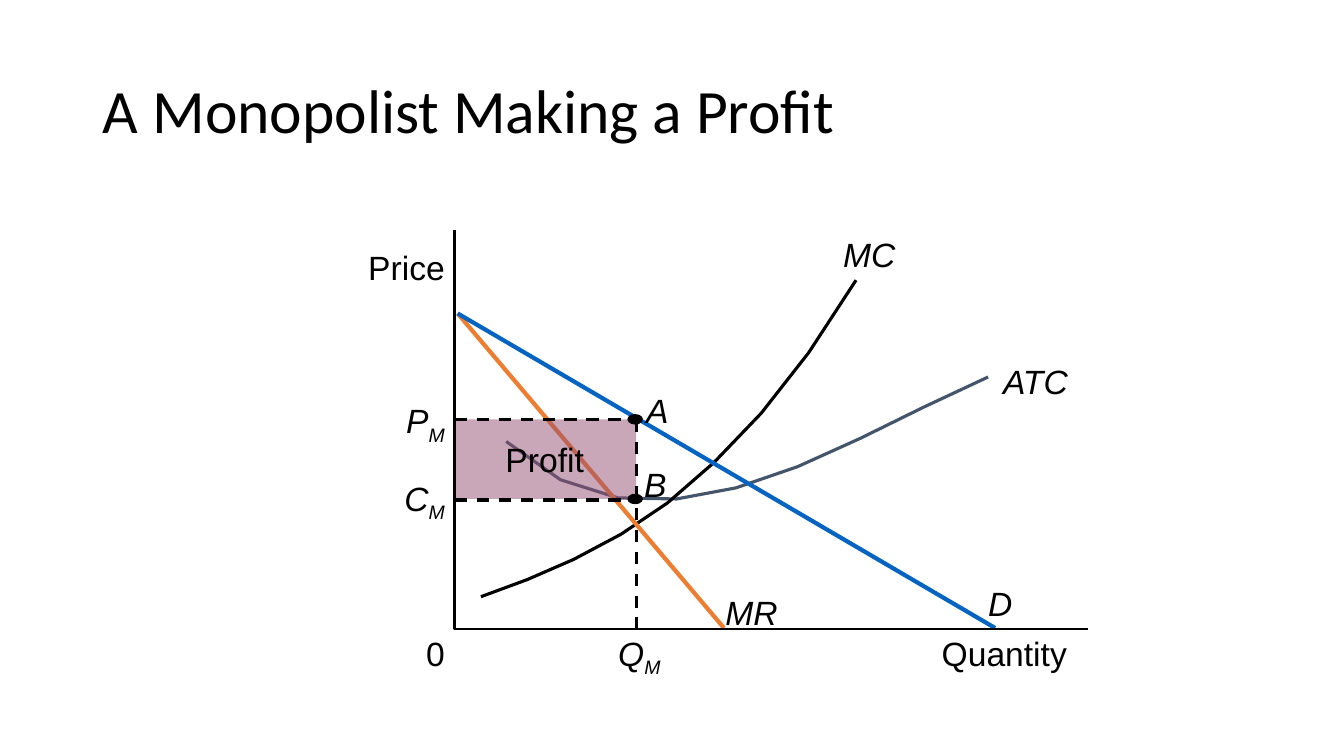
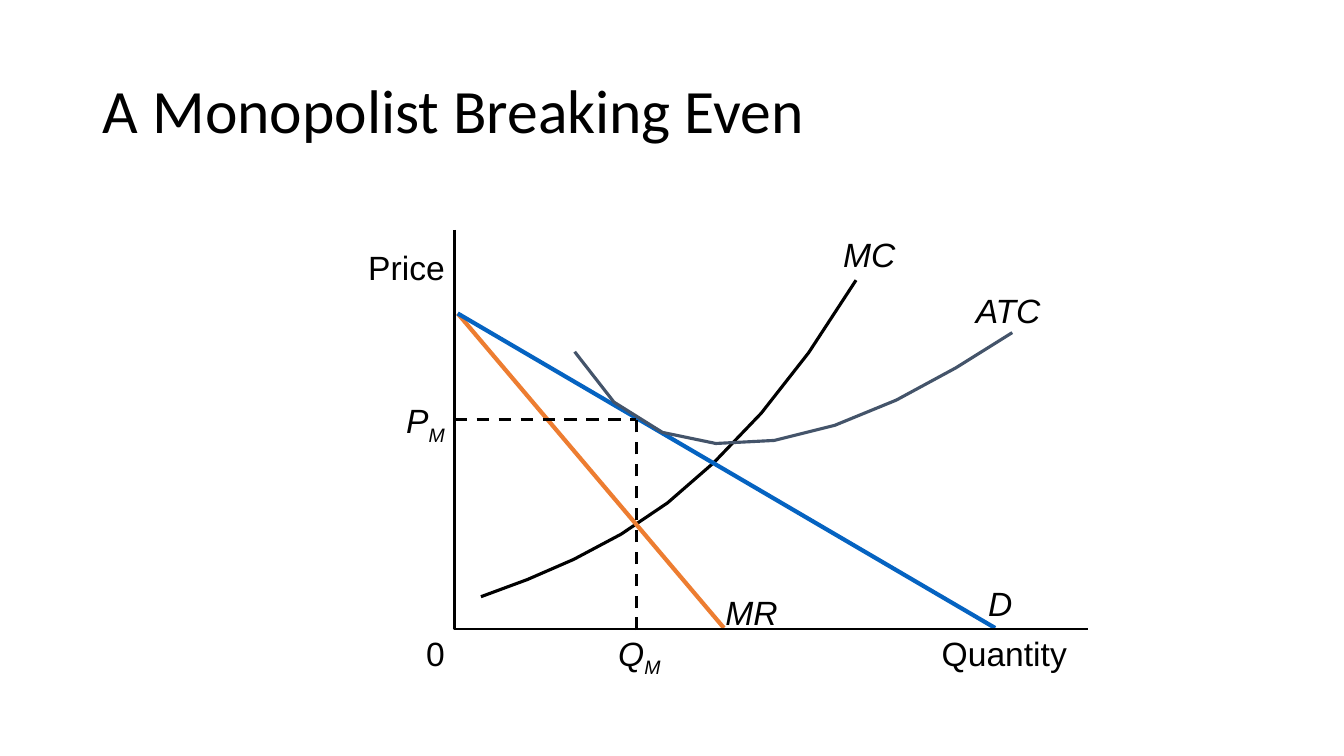
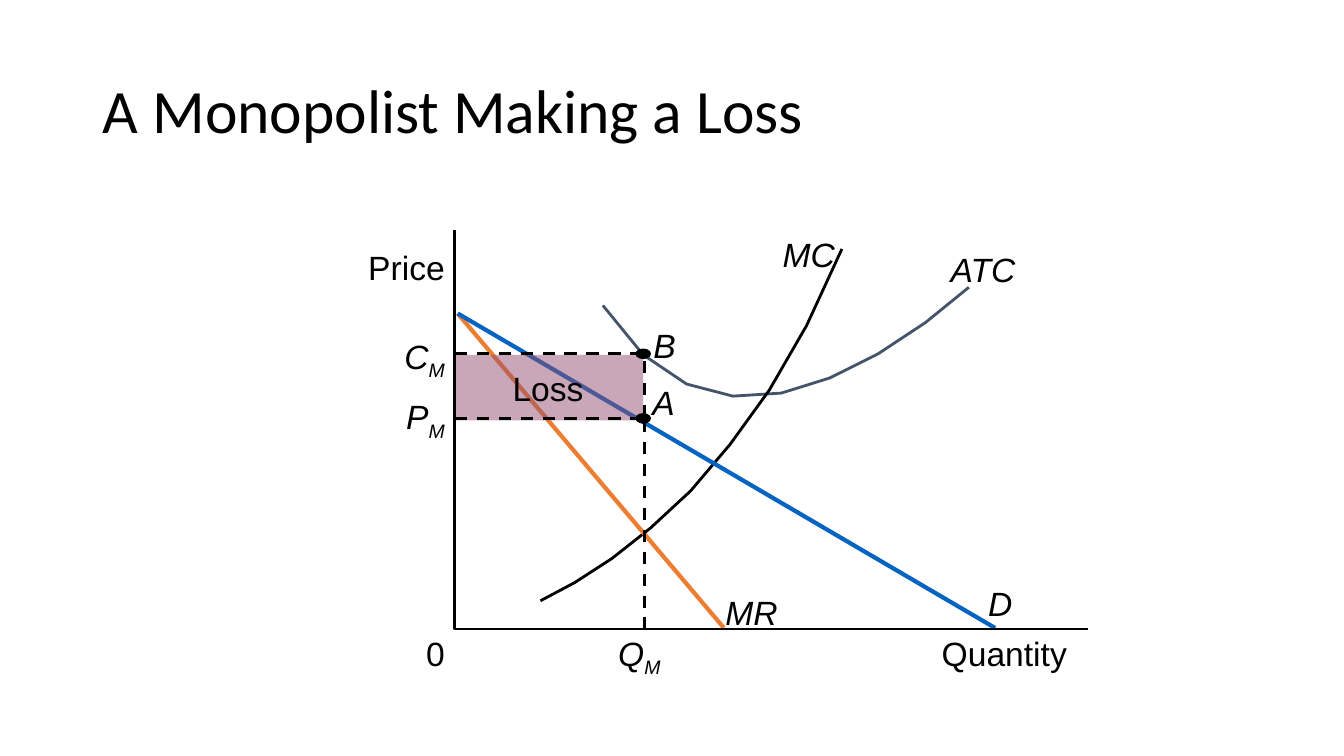
from dataclasses import dataclass

from lxml import etree
from pptx import Presentation
from pptx.dml.color import RGBColor
from pptx.enum.dml import MSO_LINE
from pptx.enum.shapes import MSO_CONNECTOR, MSO_SHAPE
from pptx.enum.text import MSO_ANCHOR, MSO_AUTO_SIZE, PP_ALIGN
from pptx.oxml.ns import qn
from pptx.slide import Slide
from pptx.util import Inches, Pt

STRAIGHT = MSO_CONNECTOR.STRAIGHT
DASH = MSO_LINE.DASH
RECTANGLE, OVAL = MSO_SHAPE.RECTANGLE, MSO_SHAPE.OVAL
LEFT, CENTER, RIGHT = PP_ALIGN.LEFT, PP_ALIGN.CENTER, PP_ALIGN.RIGHT
MIDDLE = MSO_ANCHOR.MIDDLE
FIT_SHAPE, NO_FIT = MSO_AUTO_SIZE.SHAPE_TO_FIT_TEXT, MSO_AUTO_SIZE.NONE

BLACK = RGBColor(0x00, 0x00, 0x00)
ATC_SLATE = RGBColor(0x44, 0x54, 0x6A)
MR_ORANGE = RGBColor(0xED, 0x7D, 0x31)
DEMAND_BLUE = RGBColor(0x05, 0x63, 0xC1)
AREA_PURPLE = RGBColor(0x95, 0x4F, 0x72)

TITLE_FONT, LABEL_FONT = "Calibri", "Arial"
LABEL_HEIGHT = 0.5
DOT_WIDTH, DOT_HEIGHT = 0.14, 0.09
AXIS_X, AXIS_TOP, AXIS_Y, AXIS_RIGHT = 4.51, 2.28, 6.24, 10.79
LEVEL_END = 6.31

Point = tuple[float, float]


@dataclass(frozen=True)
class Label:
    text: str
    left: float
    top: float
    width: float
    subscript: str = ""
    italic: bool = True
    align: PP_ALIGN = RIGHT


@dataclass(frozen=True)
class Curve:
    label: Label
    points: tuple[Point, ...]
    color: RGBColor
    weight: float = 2.25


@dataclass(frozen=True)
class Level:
    """A dashed price or cost line from the vertical axis."""
    label: Label
    y: float


@dataclass(frozen=True)
class Area:
    label: Label
    top: float
    width: float
    height: float


@dataclass(frozen=True)
class Dot:
    label: Label
    x: float
    y: float


@dataclass(frozen=True)
class Diagram:
    title: str
    mc: Curve
    atc: Curve
    quantity_x: float
    quantity_tops: tuple[float, ...]
    levels: tuple[Level, ...]
    area: Area | None = None
    dots: tuple[Dot, ...] = ()
    atc_in_front: bool = False


AXIS_LABELS = (
    Label("Price", 3.54, 2.4, 0.97, italic=False),
    Label("Quantity", 9.23, 6.23, 1.45, italic=False),
    Label("0", 4.12, 6.23, 0.39, italic=False),
    Label("Q", 6, 6.23, 0.65, "M"),
)
REVENUE_START = (4.54, 3.11)
REVENUE_LINES = (
    Curve(Label("MR", 7.09, 5.82, 0.72), (REVENUE_START, (7.18, 6.23)), MR_ORANGE, 3),
    Curve(Label("D", 9.7, 5.73, 0.44), (REVENUE_START, (9.87, 6.23)), DEMAND_BLUE, 3),
)
USUAL_MC = Curve(
    Label("MC", 8.26, 2.27, 0.72),
    ((4.77, 5.92), (5.23, 5.75), (5.69, 5.55), (6.16, 5.3), (6.62, 4.99),
     (7.08, 4.59), (7.55, 4.1), (8.02, 3.5), (8.49, 2.78)),
    BLACK,
)
USUAL_PRICE = Level(Label("P", 3.9, 3.92, 0.61, "M"), 4.16)

DIAGRAMS = (
    Diagram(
        "A Monopolist Making a Profit",
        USUAL_MC,
        Curve(
            Label("ATC", 9.85, 3.53, 0.85, align=LEFT),
            ((5.02, 4.38), (5.56, 4.76), (6.13, 4.94), (6.71, 4.95), (7.3, 4.84),
             (7.91, 4.63), (8.53, 4.35), (9.16, 4.04), (9.8, 3.74)),
            ATC_SLATE,
        ),
        6.31, (4.15,),
        (USUAL_PRICE, Level(Label("C", 3.88, 4.69, 0.63, "M"), 4.96)),
        Area(Label("Profit", 4.91, 4.31, 0.98, italic=False), 4.16, 1.81, 0.79),
        (Dot(Label("A", 6.31, 3.82, 0.42), 6.3, 4.16),
         Dot(Label("B", 6.29, 4.55, 0.42), 6.3, 4.95)),
    ),
    Diagram(
        "A Monopolist Breaking Even",
        USUAL_MC,
        Curve(
            Label("ATC", 9.58, 2.83, 0.87, align=LEFT),
            ((5.7, 3.49), (6.09, 3.99), (6.57, 4.29), (7.1, 4.4), (7.68, 4.37),
             (8.28, 4.22), (8.89, 3.97), (9.48, 3.65), (10.04, 3.3)),
            ATC_SLATE,
        ),
        6.31, (4.15,),
        (USUAL_PRICE,),
        atc_in_front=True,
    ),
    Diagram(
        "A Monopolist Making a Loss",
        Curve(
            Label("MC", 7.66, 2.27, 0.72),
            ((5.36, 5.96), (5.7, 5.78), (6.07, 5.54), (6.45, 5.24), (6.85, 4.87),
             (7.24, 4.41), (7.63, 3.87), (8, 3.23), (8.35, 2.47)),
            BLACK, 2,
        ),
        Curve(
            Label("ATC", 9.33, 2.42, 0.85, align=LEFT),
            ((5.98, 3.03), (6.38, 3.52), (6.81, 3.81), (7.27, 3.93), (7.75, 3.9),
             (8.23, 3.75), (8.71, 3.51), (9.18, 3.2), (9.61, 2.85)),
            ATC_SLATE, 2,
        ),
        6.39, (4.14, 3.51),
        (Level(Label("P", 3.9, 3.88, 0.61, "M"), 4.15),
         Level(Label("C", 3.88, 3.28, 0.63, "M"), 3.51)),
        Area(Label("Loss", 4.98, 3.6, 0.91, italic=False, align=CENTER), 3.52, 1.88, 0.65),
        (Dot(Label("B", 6.38, 3.17, 0.42), 6.38, 3.51),
         Dot(Label("A", 6.37, 3.74, 0.42), 6.38, 4.15)),
    ),
)


def set_title(slide: Slide, text: str) -> None:
    title = slide.shapes.title
    title.left, title.top = Inches(0.92), Inches(0.4)
    title.width, title.height = Inches(11.5), Inches(1.45)
    frame = title.text_frame
    frame.text = text
    frame.vertical_anchor = MIDDLE
    frame.auto_size = NO_FIT
    paragraph = frame.paragraphs[0]
    paragraph.alignment = LEFT
    paragraph.line_spacing = 0.9
    paragraph.font.name = TITLE_FONT
    paragraph.font.size = Pt(44)
    paragraph.font.color.rgb = BLACK


def add_label(slide: Slide, label: Label) -> None:
    box = slide.shapes.add_textbox(
        Inches(label.left), Inches(label.top), Inches(label.width), Inches(LABEL_HEIGHT))
    frame = box.text_frame
    frame.word_wrap = False
    frame.auto_size = FIT_SHAPE
    paragraph = frame.paragraphs[0]
    paragraph.alignment = label.align
    paragraph.add_run().text = label.text
    if label.subscript:
        subscript = paragraph.add_run()
        subscript.text = label.subscript
        subscript.font._element.set("baseline", "-25000")
    paragraph.font.name = LABEL_FONT
    paragraph.font.size = Pt(24)
    paragraph.font.italic = label.italic
    paragraph.font.color.rgb = BLACK


def add_line(slide: Slide, start: Point, end: Point, color: RGBColor = BLACK,
             weight: float = 2.25, dashed: bool = False) -> None:
    connector = slide.shapes.add_connector(
        STRAIGHT, *(Inches(value) for value in (*start, *end)))
    connector.line.color.rgb = color
    connector.line.width = Pt(weight)
    if dashed:
        connector.line.dash_style = DASH
    etree.SubElement(connector._element.spPr, qn("a:effectLst"))


def add_polyline(slide: Slide, points: tuple[Point, ...], color: RGBColor,
                 weight: float) -> None:
    start, *rest = [(Inches(x), Inches(y)) for x, y in points]
    builder = slide.shapes.build_freeform(*start)
    builder.add_line_segments(rest, close=False)
    outline = builder.convert_to_shape()
    outline.shadow.inherit = False
    outline.fill.background()
    outline.line.color.rgb = color
    outline.line.width = Pt(weight)


def add_curve(slide: Slide, curve: Curve) -> None:
    if len(curve.points) == 2:
        add_line(slide, *curve.points, curve.color, curve.weight)
    else:
        add_polyline(slide, curve.points, curve.color, curve.weight)
    add_label(slide, curve.label)


def add_area(slide: Slide, area: Area) -> None:
    """Shade profit or loss at half transparency."""
    shading = slide.shapes.add_shape(
        RECTANGLE, Inches(4.5), Inches(area.top), Inches(area.width), Inches(area.height))
    shading.shadow.inherit = False
    shading.line.fill.background()
    shading.fill.solid()
    shading.fill.fore_color.rgb = AREA_PURPLE
    color = shading._element.spPr.find(f"{qn('a:solidFill')}/{qn('a:srgbClr')}")
    etree.SubElement(color, qn("a:alpha")).set("val", "50000")
    add_label(slide, area.label)


def add_dot(slide: Slide, dot: Dot) -> None:
    marker = slide.shapes.add_shape(
        OVAL, Inches(dot.x - DOT_WIDTH / 2), Inches(dot.y - DOT_HEIGHT / 2),
        Inches(DOT_WIDTH), Inches(DOT_HEIGHT))
    marker.shadow.inherit = False
    marker.fill.solid()
    marker.fill.fore_color.rgb = BLACK
    marker.line.color.rgb = BLACK
    marker.line.width = Pt(1)
    add_label(slide, dot.label)


def draw_diagram(slide: Slide, diagram: Diagram) -> None:
    set_title(slide, diagram.title)
    curves = [diagram.mc, *REVENUE_LINES]
    curves.insert(len(curves) if diagram.atc_in_front else 0, diagram.atc)
    for curve in curves:
        add_curve(slide, curve)
    if diagram.area:
        add_area(slide, diagram.area)
    bottom = 6.25
    for top in diagram.quantity_tops:
        add_line(slide, (diagram.quantity_x, bottom), (diagram.quantity_x, top), dashed=True)
        bottom = top
    for level in diagram.levels:
        add_line(slide, (AXIS_X, level.y), (LEVEL_END, level.y), dashed=True)
        add_label(slide, level.label)
    axes = ((AXIS_X, AXIS_TOP), (AXIS_X, AXIS_Y), (AXIS_RIGHT, AXIS_Y))
    add_polyline(slide, axes, BLACK, 2)
    for label in AXIS_LABELS:
        add_label(slide, label)
    for dot in diagram.dots:
        add_dot(slide, dot)


def main() -> None:
    presentation = Presentation()
    presentation.slide_width, presentation.slide_height = Inches(13.33), Inches(7.5)
    title_only = presentation.slide_layouts[5]
    for diagram in DIAGRAMS:
        draw_diagram(presentation.slides.add_slide(title_only), diagram)
    presentation.save("out.pptx")


if __name__ == "__main__":
    main()
